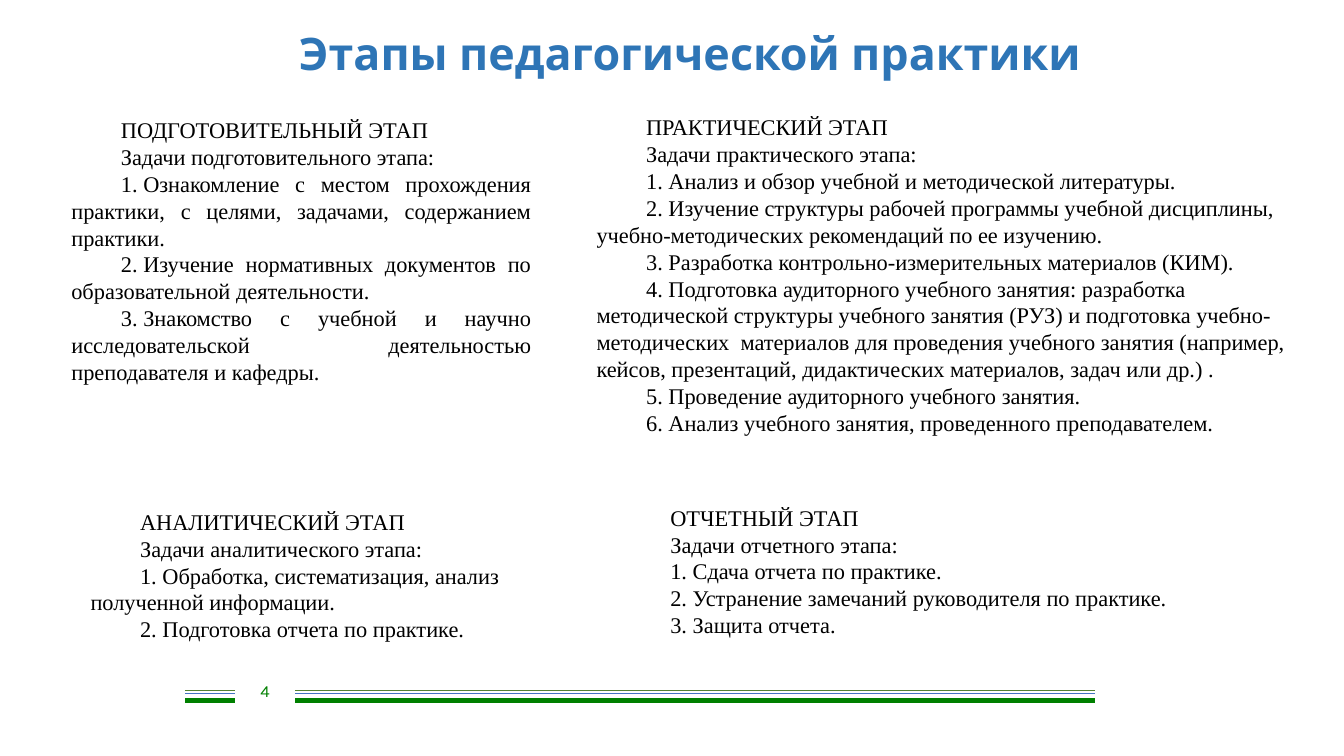
from dataclasses import dataclass

from lxml.etree import SubElement
from pptx import Presentation
from pptx.dml.color import RGBColor
from pptx.enum.shapes import MSO_CONNECTOR
from pptx.enum.text import MSO_ANCHOR, MSO_AUTO_SIZE, PP_ALIGN
from pptx.oxml.ns import qn
from pptx.util import Pt


@dataclass(frozen=True)
class Theme:
    heading_font: str = "Karla"
    body_font: str = "Times New Roman"
    title_size: int = 32
    body_size: int = 16
    number_size: int = 12
    title_blue: str = "2E75B6"
    rule_blue: str = "4472C4"
    rule_olive: str = "548235"
    green: str = "008000"
    black: str = "000000"


THEME = Theme()
NBSP = chr(160)
FIRST_LINE_INDENT = 35.4

STAGES = [
    (
        (43.92, 78.48, 342.72, 200.88), PP_ALIGN.JUSTIFY,
        "ПОДГОТОВИТЕЛЬНЫЙ ЭТАП", "Задачи подготовительного этапа:",
        [
            "Ознакомление с местом прохождения практики, с целями, задачами, содержанием практики.",
            "Изучение нормативных документов по образовательной деятельности.",
            "Знакомство с учебной и научно исследовательской деятельностью преподавателя и кафедры.",
        ],
    ),
    (
        (419.04, 76.32, 514.08, 239.76), PP_ALIGN.LEFT,
        "ПРАКТИЧЕСКИЙ ЭТАП", "Задачи практического этапа:",
        [
            "Анализ и обзор учебной и методической литературы.",
            "Изучение структуры рабочей программы учебной дисциплины, "
            "учебно-методических рекомендаций по ее изучению.",
            "Разработка контрольно-измерительных материалов (КИМ).",
            "Подготовка аудиторного учебного занятия: разработка методической структуры "
            "учебного занятия (РУЗ) и подготовка учебно-методических  материалов для проведения "
            "учебного занятия (например, кейсов, презентаций, дидактических материалов, "
            "задач или др.) .",
            "Проведение аудиторного учебного занятия.",
            "Анализ учебного занятия, проведенного преподавателем.",
        ],
    ),
    (
        (57.6, 358.56, 355.68, 104.4), PP_ALIGN.LEFT,
        "АНАЛИТИЧЕСКИЙ ЭТАП", "Задачи аналитического этапа:",
        [
            "Обработка, систематизация, анализ полученной информации.",
            "Подготовка отчета по практике.",
        ],
    ),
    (
        (436.32, 355.68, 474.48, 104.4), PP_ALIGN.JUSTIFY,
        "ОТЧЕТНЫЙ ЭТАП", "Задачи отчетного этапа:",
        [
            "Сдача отчета по практике.",
            "Устранение замечаний руководителя по практике.",
            "Защита отчета.",
        ],
    ),
]

RULE_SPANS = [(132.48, 167.76), (210.96, 781.92)]
RULE_STRIPES = [
    (493.2, THEME.rule_olive, 1),
    (495.36, THEME.rule_blue, 1),
    (500.4, THEME.green, 3),
]


def style_paragraph(paragraph, font, size, color, align, bold=False):
    paragraph.alignment = align
    paragraph.line_spacing = 1.0
    paragraph.font.name = font
    paragraph.font.size = Pt(size)
    paragraph.font.bold = bold
    paragraph.font.color.rgb = RGBColor.from_string(color)


def add_text_area(slide, place):
    frame = slide.shapes.add_textbox(*map(Pt, place)).text_frame
    frame.word_wrap = True
    frame.vertical_anchor = MSO_ANCHOR.MIDDLE
    return frame


def set_title(slide, text):
    title = slide.shapes.title
    title.left, title.top, title.width, title.height = map(Pt, (38.88, 8.64, 907.92, 58.32))
    frame = title.text_frame
    frame.text = text
    frame.word_wrap = True
    frame.auto_size = MSO_AUTO_SIZE.NONE
    frame.vertical_anchor = MSO_ANCHOR.MIDDLE
    frame.margin_left = frame.margin_right = Pt(9.4)
    frame.margin_top = frame.margin_bottom = Pt(5)
    style_paragraph(frame.paragraphs[0], THEME.heading_font, THEME.title_size,
                    THEME.title_blue, PP_ALIGN.CENTER, bold=True)


def add_stage(slide, place, align, heading, intro, tasks):
    frame = add_text_area(slide, place)
    frame.auto_size = MSO_AUTO_SIZE.SHAPE_TO_FIT_TEXT
    numbered = [f"{number}.{NBSP}{task}" for number, task in enumerate(tasks, 1)]
    frame.text = "\n".join([heading, intro, *numbered])
    for paragraph in frame.paragraphs:
        style_paragraph(paragraph, THEME.body_font, THEME.body_size, THEME.black, align)
        paragraph._p.get_or_add_pPr().set("indent", str(Pt(FIRST_LINE_INDENT)))


def add_page_number(slide, number):
    frame = add_text_area(slide, (167.76, 478.8, 43.2, 28.8))
    frame.text = number
    style_paragraph(frame.paragraphs[0], THEME.heading_font, THEME.number_size,
                    THEME.green, PP_ALIGN.CENTER)


def add_rule(slide, left, right, y, color, weight):
    rule = slide.shapes.add_connector(
        MSO_CONNECTOR.STRAIGHT, Pt(left), Pt(y), Pt(right), Pt(y))
    rule.line.color.rgb = RGBColor.from_string(color)
    rule.line.width = Pt(weight)
    SubElement(rule._element.spPr, qn("a:effectLst"))


def main():
    deck = Presentation()
    deck.slide_width, deck.slide_height = Pt(960), Pt(540)
    slide = deck.slides.add_slide(deck.slide_layouts.get_by_name("Title Only"))

    set_title(slide, "Этапы педагогической практики")
    add_page_number(slide, "4")
    for left, right in RULE_SPANS:
        for y, color, weight in RULE_STRIPES:
            add_rule(slide, left, right, y, color, weight)
    for stage in STAGES:
        add_stage(slide, *stage)

    deck.save("out.pptx")


if __name__ == "__main__":
    main()
